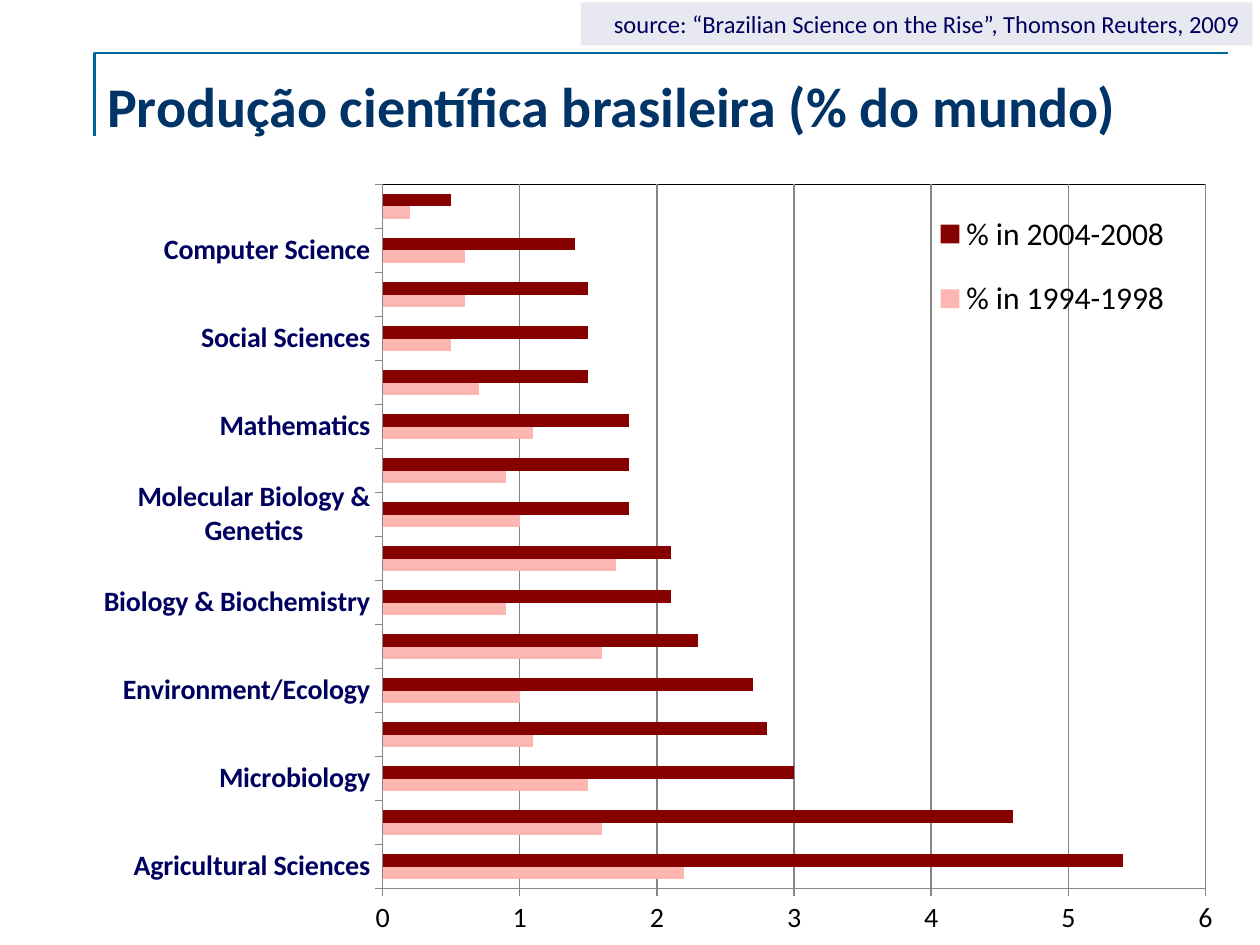
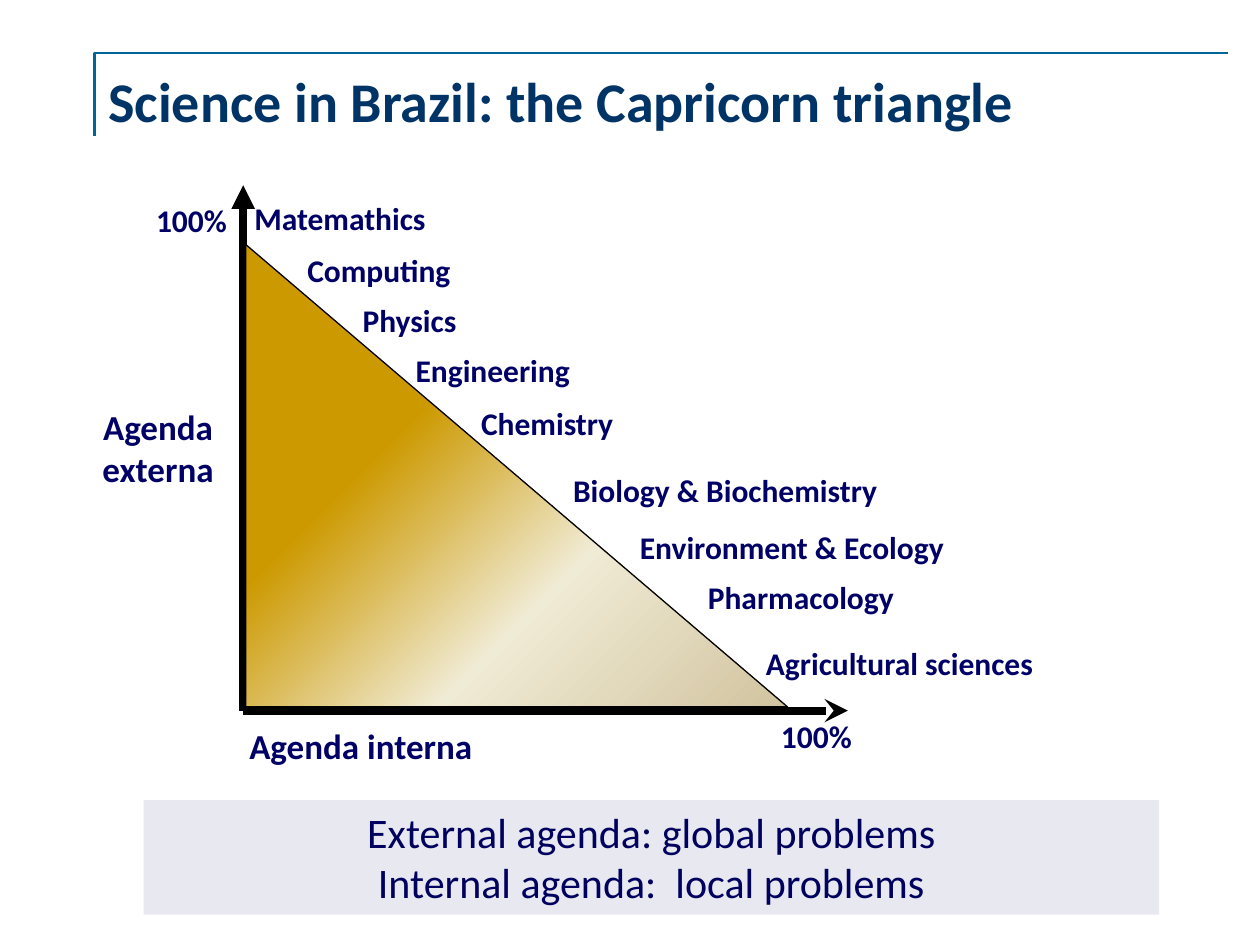
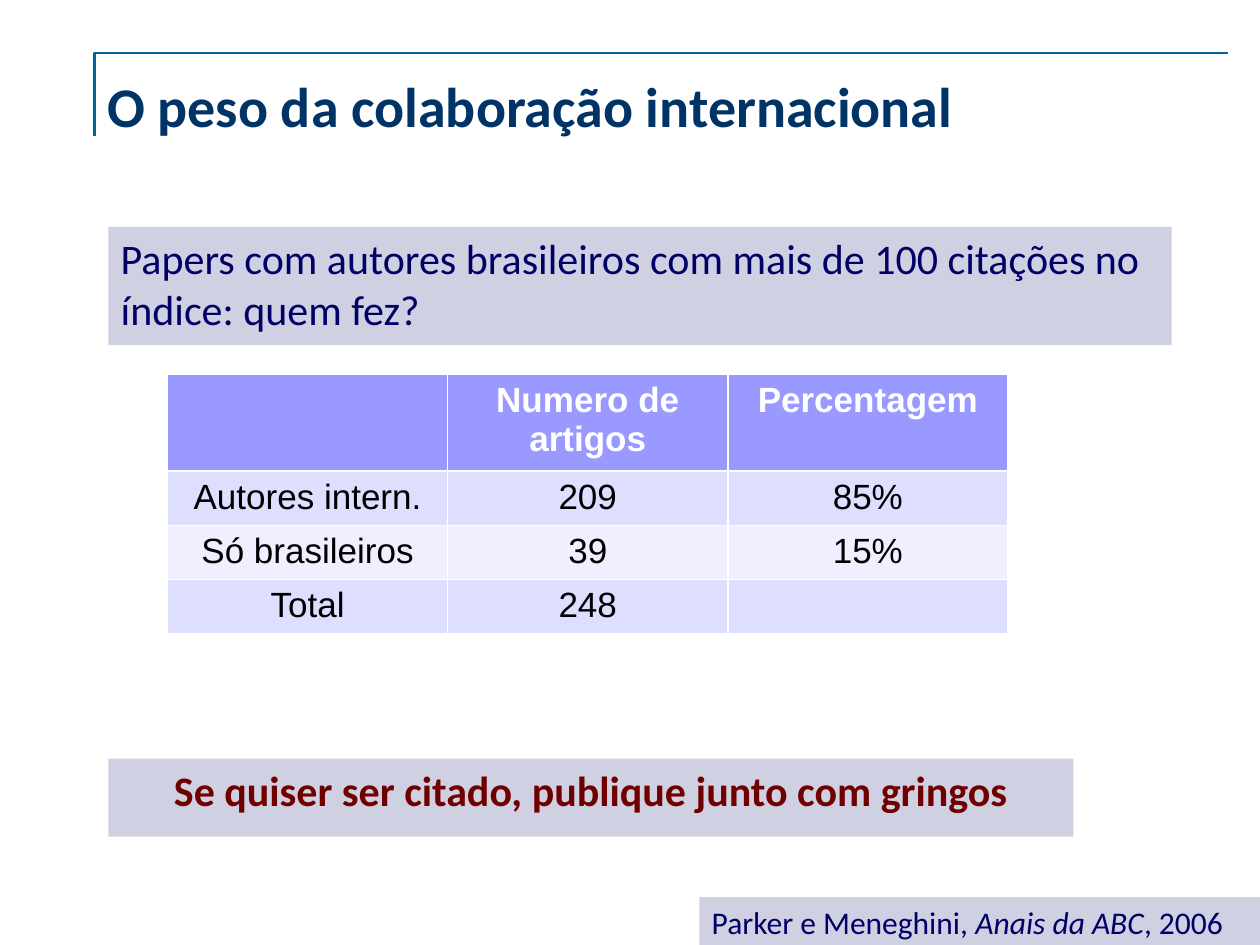
from lxml.etree import SubElement
from pptx import Presentation
from pptx.chart.data import CategoryChartData as Data
from pptx.dml.color import RGBColor
from pptx.enum.chart import XL_CHART_TYPE as Kind, XL_LEGEND_POSITION as Spot, XL_TICK_MARK as Tick
from pptx.enum.shapes import MSO_CONNECTOR as Link, MSO_SHAPE as Form
from pptx.enum.text import MSO_ANCHOR as Anchor, MSO_AUTO_SIZE as Auto, PP_ALIGN as Align
from pptx.oxml import parse_xml
from pptx.oxml.ns import nsdecls, qn
from pptx.util import Inches, Pt

HUES = {
    "rule": "006699", "title": "003366", "navy": "00005E", "ink": "000066",
    "pale": "E8E8F1", "band": "D0D0E3", "wine": "700000", "black": "000000",
    "white": "FFFFFF", "grid": "868686", "pink": "FCB7B2", "red": "860000",
    "head": "9999FF", "odd": "DEDEFF", "even": "EFEFFF",
    "gold": "CC9900", "cream": "F0EBD5", "sand": "D1C39F",
}
RGB = {name: RGBColor.from_string(code) for name, code in HUES.items()}


def style(font, size, hue, bold=False, face="Calibri"):
    font.name, font.size, font.bold = face, Pt(size), bold
    font.color.rgb = RGB[hue]


def write(slide, box, lines, size, hue="ink", bold=False, align=Align.LEFT, fill=None):
    place = [Inches(n) for n in box]
    if fill:
        shape = slide.shapes.add_shape(Form.RECTANGLE, *place)
        shape.shadow.inherit = False
        shape.fill.solid()
        shape.fill.fore_color.rgb = RGB[fill]
        shape.line.fill.background()
    else:
        shape = slide.shapes.add_textbox(*place)
        shape.text_frame.auto_size = Auto.SHAPE_TO_FIT_TEXT
    frame = shape.text_frame
    frame.word_wrap = bool(fill)
    frame.vertical_anchor = Anchor.TOP
    frame.text = lines
    for par in frame.paragraphs:
        par.alignment = align
        style(par.font, size, hue, bold)
    return shape


deck = Presentation()
deck.slide_width, deck.slide_height = Inches(10), Inches(7.5)
layout = deck.slide_layouts[5]

titles = [
    ("Produção científica brasileira (% do mundo)", (0.75, 0.42, 8.92, 0.83)),
    ("Science in Brazil: the Capricorn triangle", (0.76, 0.38, 9.24, 0.83)),
    ("O peso da colaboração internacional", (0.75, 0.42, 8.92, 0.83)),
]
slides = []
for text, box in titles:
    slide = deck.slides.add_slide(layout)
    title = slide.shapes.title
    title.left, title.top, title.width, title.height = [Inches(n) for n in box]
    title.text = text
    title.text_frame.vertical_anchor = Anchor.MIDDLE
    par = title.text_frame.paragraphs[0]
    par.alignment = Align.LEFT
    style(par.font, 32, "title", True)
    slides.append(slide)
output, agenda, collab = slides

pen = output.shapes.build_freeform(Inches(0.75), Inches(1.08))
pen.add_line_segments([(Inches(0.75), Inches(0.42)), (Inches(9.75), Inches(0.42))], close=False)
corner = pen.convert_to_shape()
corner.shadow.inherit = False
corner.fill.background()
corner.line.color.rgb = RGB["rule"]
corner.line.width = Pt(1.5)
layout.shapes.element.append(corner.element)

fields = [
    ("Agricultural Sciences", 2.2, 5.4), ("Plant & Animal Science", 1.6, 4.6),
    ("Microbiology", 1.5, 3), ("Pharmacology & Toxicology", 1.1, 2.8),
    ("Environment/Ecology", 1, 2.7), ("Physics", 1.6, 2.3),
    ("Biology & Biochemistry", 0.9, 2.1), ("Space Science", 1.7, 2.1),
    ("Molecular Biology & Genetics", 1, 1.8), ("Chemistry", 0.9, 1.8),
    ("Mathematics", 1.1, 1.8), ("Materials Science", 0.7, 1.5),
    ("Social Sciences", 0.5, 1.5), ("Engineering", 0.6, 1.5),
    ("Computer Science", 0.6, 1.4), ("Economics & Business", 0.2, 0.5),
]
names, early, late = zip(*fields)
data = Data()
data.categories = names
data.add_series("% in 1994-1998", early)
data.add_series("% in 2004-2008", late)
chart = output.shapes.add_chart(
    Kind.BAR_CLUSTERED, Inches(0.59), Inches(1.31), Inches(9.41), Inches(6.19), data).chart
chart.has_title = False
style(chart.font, 10, "black", face="Arial")
plot = chart.plots[0]
plot.gap_width = 150
plot.vary_by_categories = False
for bars, hue in zip(plot.series, ("pink", "red")):
    bars.format.fill.solid()
    bars.format.fill.fore_color.rgb = RGB[hue]

cats, vals = chart.category_axis, chart.value_axis
style(cats.tick_labels.font, 16, "navy", True)
style(vals.tick_labels.font, 16, "black")
vals.minimum_scale, vals.maximum_scale, vals.major_unit = 0, 6, 1
vals.has_major_gridlines = True
for axis in (cats, vals):
    axis.major_tick_mark = Tick.OUTSIDE
for part in (cats, vals, vals.major_gridlines):
    part.format.line.color.rgb = RGB["grid"]
    part.format.line.width = Pt(0.75)

chart.has_legend = True
legend = chart.legend
legend.position = Spot.RIGHT
legend.include_in_layout = False
style(legend.font, 18, "black")

area = chart.element.find(".//" + qn("c:plotArea"))
key = chart.element.find(".//" + qn("c:legend"))
for part, at, inner, spots in (
    (area, 0, True, (0.26, 0.025, 0.694, 0.903)),
    (key, 1, False, (0.71, 0.03, 0.23, 0.2)),
):
    for old in part.findall(qn("c:layout")):
        part.remove(old)
    grid = parse_xml(f"<c:layout {nsdecls('c')}><c:manualLayout/></c:layout>")
    tags = [("layoutTarget", "inner")] if inner else []
    tags += [("xMode", "edge"), ("yMode", "edge"), *zip("xywh", spots)]
    for tag, val in tags:
        SubElement(grid[0], qn("c:" + tag), val=str(val))
    part.insert(at, grid)
area.append(parse_xml(
    f'<c:spPr {nsdecls("c", "a")}><a:noFill/><a:ln w="9525"><a:solidFill>'
    f'<a:srgbClr val="{HUES["black"]}"/></a:solidFill></a:ln></c:spPr>'))

write(output, (4.61, 0.02, 5.33, 0.34),
      "source: “Brazilian Science on the Rise”, Thomson Reuters, 2009",
      14, "navy", align=Align.RIGHT, fill="pale")

for end, tip in (((1.93, 1.47), "triangle"), ((6.73, 5.64), "stealth")):
    arrow = agenda.shapes.add_connector(
        Link.STRAIGHT, Inches(1.93), Inches(5.64), *[Inches(n) for n in end])
    arrow.line.color.rgb = RGB["black"]
    arrow.line.width = Pt(4.5)
    SubElement(arrow.line._get_or_add_ln(), qn("a:tailEnd"), type=tip)
    SubElement(arrow.element.spPr, qn("a:effectLst"))

wedge = agenda.shapes.add_shape(
    Form.RIGHT_TRIANGLE, Inches(1.95), Inches(1.94), Inches(4.3), Inches(3.67))
wedge.shadow.inherit = False
wedge.line.color.rgb = RGB["black"]
wedge.line.width = Pt(0.75)
wedge.fill.gradient()
wedge.fill.gradient_angle = 315
stops = wedge.element.find(".//" + qn("a:gsLst"))
for old in list(stops):
    stops.remove(old)
for pos, hue in ((0, "gold"), (34, "gold"), (65, "cream"), (100, "sand")):
    stop = SubElement(stops, qn("a:gs"), pos=str(pos * 1000))
    SubElement(stop, qn("a:srgbClr"), val=HUES[hue])

labels = [
    ("100%", 1.14, 1.55, 0.77), ("Matemathics", 1.92, 1.53, 1.58),
    ("Computing", 2.34, 1.94, 1.35), ("Physics", 2.78, 2.34, 0.96),
    ("Engineering", 3.2, 2.74, 1.45), ("Chemistry", 3.72, 3.16, 1.27),
    ("Biology & Biochemistry", 4.45, 3.69, 2.64),
    ("Environment & Ecology", 4.98, 4.14, 2.66),
    ("Pharmacology", 5.52, 4.54, 1.7),
    ("Agricultural sciences", 5.98, 5.06, 2.35), ("100%", 6.1, 5.64, 0.77),
]
for text, left, top, width in labels:
    write(agenda, (left, top, width, 0.4), text, 18, bold=True)
write(agenda, (1.88, 5.7, 2.05, 0.44), "Agenda interna", 20, bold=True)
write(agenda, (0.59, 3.17, 1.33, 0.77), "Agenda\nexterna", 20, bold=True, align=Align.CENTER)
write(agenda, (1.14, 6.35, 8.06, 0.91),
      "External agenda: global problems\nInternal agenda:  local problems",
      24, "navy", align=Align.CENTER, fill="pale")

rows = [
    ("", "Numero de artigos", "Percentagem"),
    ("Autores intern.", "209", "85%"),
    ("Só brasileiros", "39", "15%"),
    ("Total", "248", ""),
]
table = collab.shapes.add_table(
    4, 3, Inches(1.33), Inches(2.97), Inches(6.67), Inches(2.07)).table
for r, row in enumerate(rows):
    table.rows[r].height = Inches(0.43 if r else 0.77)
    for c, text in enumerate(row):
        cell = table.cell(r, c)
        cell.fill.solid()
        cell.fill.fore_color.rgb = RGB[("head", "odd", "even", "odd")[r]]
        cell.text = text
        par = cell.text_frame.paragraphs[0]
        par.alignment = Align.CENTER
        style(par.font, 20, "black" if r else "white", r == 0, "Arial")

write(collab, (0.86, 1.8, 8.44, 0.94),
      "Papers com autores brasileiros com mais de 100 citações no índice: quem fez?",
      24, fill="band")
write(collab, (0.86, 6.02, 7.66, 0.62), "Se quiser ser citado, publique junto com gringos",
      24, "wine", True, Align.CENTER, "band")
cite = write(collab, (5.55, 7.12, 4.45, 0.38), "Parker e Meneghini, ", 18, fill="band")
par = cite.text_frame.paragraphs[0]
for text, slant in (("Anais da ABC", True), (", 2006", False)):
    run = par.add_run()
    run.text = text
    run.font.italic = slant

deck.save("out.pptx")
